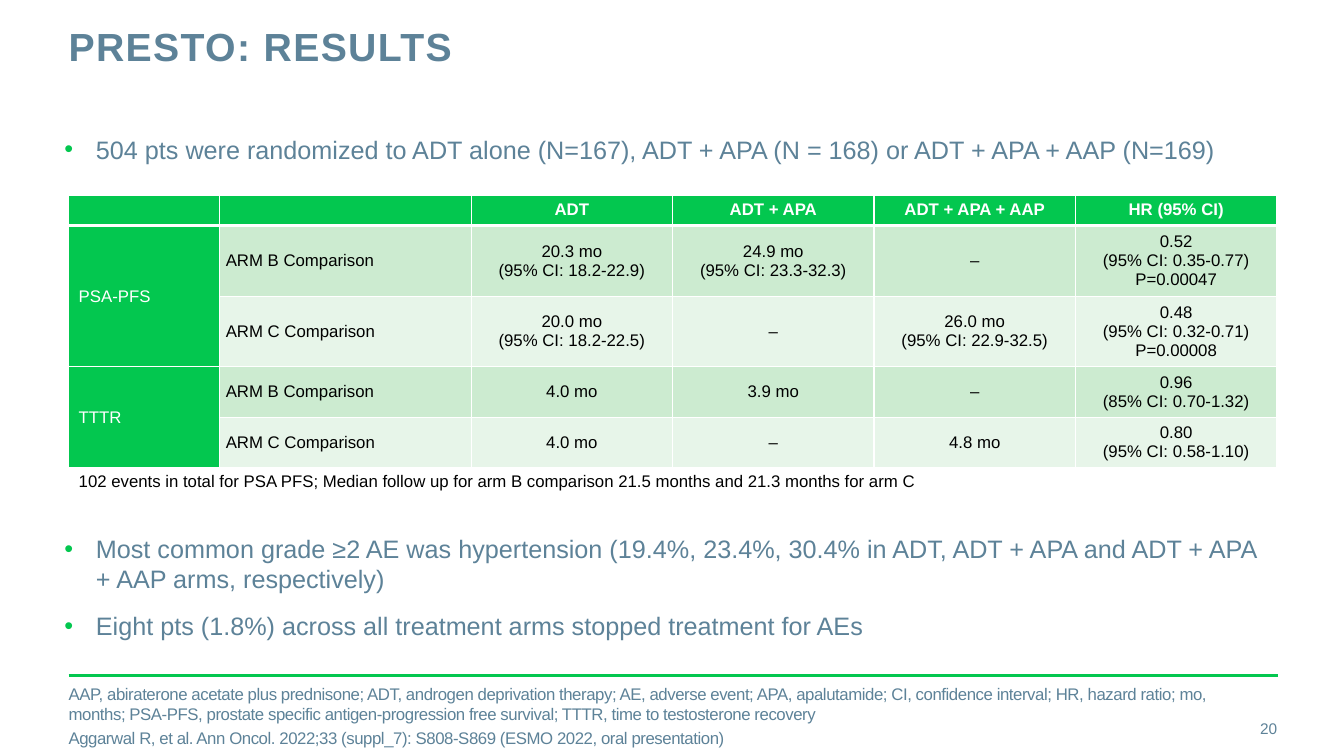
from dataclasses import dataclass

from lxml.etree import SubElement
from pptx import Presentation
from pptx.dml.color import RGBColor
from pptx.enum.shapes import MSO_CONNECTOR
from pptx.enum.text import MSO_ANCHOR, PP_ALIGN
from pptx.oxml.ns import qn
from pptx.util import Pt


@dataclass(frozen=True)
class Theme:
    """Colours, typeface and type sizes of the deck."""

    font: str = "Arial"
    green: str = "03C74F"
    slate: str = "5D8298"
    white: str = "FFFFFF"
    black: str = "000000"
    bands: tuple = ("CCEBD0", "E7F5E9")
    title: float = 28
    body: float = 18
    small: float = 12
    number: float = 11


class SlideBuilder:
    """Draws styled elements on the current slide."""

    def __init__(self, page, theme):
        """Keep the slide and its theme."""
        self.page = page
        self.theme = theme

    def style(self, para, size, color, bold=False, spacing=0):
        """Set the font of a whole paragraph."""
        font = para.font
        font.name, font.size, font.bold = self.theme.font, Pt(size), bold
        font.color.rgb = RGBColor.from_string(color)
        if spacing:
            para._p.pPr.find(qn("a:defRPr")).set("spc", str(spacing))

    def bullet(self, para):
        """Give a paragraph a green bullet with a hanging indent."""
        props = para._p.get_or_add_pPr()
        props.set("marL", str(Pt(22.5)))
        props.set("indent", str(-Pt(22.5)))
        color = SubElement(props, qn("a:buClr"))
        SubElement(color, qn("a:srgbClr"), val=self.theme.green)
        SubElement(props, qn("a:buFont"), typeface=self.theme.font)
        SubElement(props, qn("a:buChar"), char="•")

    def text(self, place, lines, size, bold=False, spacing=0, gap=0, leading=None,
             bullets=False, align=PP_ALIGN.LEFT, anchor=MSO_ANCHOR.TOP):
        """Add a text box with one paragraph per line."""
        frame = self.page.shapes.add_textbox(*map(Pt, place)).text_frame
        frame.word_wrap = True
        frame.vertical_anchor = anchor
        frame.margin_left = frame.margin_right = frame.margin_top = frame.margin_bottom = 0
        for index, line in enumerate(lines):
            para = frame.add_paragraph() if index else frame.paragraphs[0]
            para.text = line
            if bullets:
                self.bullet(para)
            para.alignment = align
            if index:
                para.space_before = Pt(gap)
            if leading:
                para.line_spacing = Pt(leading)
            self.style(para, size, self.theme.slate, bold, spacing)

    def rule(self, left, right, top):
        """Add a horizontal green line."""
        line = self.page.shapes.add_connector(
            MSO_CONNECTOR.STRAIGHT, Pt(left), Pt(top), Pt(right), Pt(top))
        line.line.color.rgb = RGBColor.from_string(self.theme.green)
        line.line.width = Pt(2)
        SubElement(line._element.spPr, qn("a:effectLst"))

    def cell(self, cell, text, color, fill=None, bold=False, align=PP_ALIGN.LEFT,
             anchor=MSO_ANCHOR.MIDDLE, margin=7.2, top=1, bottom=1):
        """Fill one table cell and draw its white borders."""
        props = cell._tc.get_or_add_tcPr()
        for side, width in zip("LRTB", (1, 1, top, bottom)):
            border = SubElement(props, qn(f"a:ln{side}"), w=str(Pt(width)))
            solid = SubElement(border, qn("a:solidFill"))
            SubElement(solid, qn("a:srgbClr"), val=self.theme.white)
        if fill:
            cell.fill.solid()
            cell.fill.fore_color.rgb = RGBColor.from_string(fill)
        else:
            cell.fill.background()
        cell.vertical_anchor = anchor
        cell.margin_left = cell.margin_right = Pt(margin)
        cell.margin_top = cell.margin_bottom = Pt(3.6)
        cell.text = text
        for para in cell.text_frame.paragraphs:
            para.alignment = align
            self.style(para, self.theme.small, color, bold)
            if not text:
                SubElement(para._p, qn("a:endParaRPr"), sz=str(self.theme.small * 100))

    def results_table(self, left, top, widths, heights, header, groups, note):
        """Add the table of endpoints, with two comparisons per endpoint."""
        theme = self.theme
        table = self.page.shapes.add_table(
            len(heights), len(widths), Pt(left), Pt(top),
            Pt(sum(widths)), Pt(sum(heights))).table
        table.first_row = table.horz_banding = False
        for column, width in zip(table.columns, widths):
            column.width = Pt(width)
        for row, height in zip(table.rows, heights):
            row.height = Pt(height)
        for column, label in enumerate(header):
            self.cell(table.cell(0, column), label, theme.white, theme.green, True,
                      PP_ALIGN.CENTER, MSO_ANCHOR.TOP, bottom=3)
        for group, (endpoint, comparisons) in enumerate(groups):
            first = 1 + 2 * group
            table.cell(first, 0).merge(table.cell(first + 1, 0))
            for offset, values in enumerate(comparisons):
                row = first + offset
                edge = 3 if row == 1 else 1
                self.cell(table.cell(row, 0), "" if offset else endpoint,
                          theme.white, theme.green, top=edge)
                for column, value in enumerate(values, 1):
                    align = PP_ALIGN.LEFT if column == 1 else PP_ALIGN.CENTER
                    self.cell(table.cell(row, column), value, theme.black,
                              theme.bands[offset], align=align, margin=4.5, top=edge)
        last = len(heights) - 1
        table.cell(last, 0).merge(table.cell(last, len(widths) - 1))
        for column in range(len(widths)):
            self.cell(table.cell(last, column), "" if column else note,
                      theme.black, anchor=MSO_ANCHOR.TOP)


HEADER = ("", "", "ADT", "ADT + APA", "ADT + APA + AAP", "HR (95% CI)")
GROUPS = (
    ("PSA-PFS", (
        ("ARM B Comparison", "20.3 mo\n(95% CI: 18.2-22.9)", "24.9 mo\n(95% CI: 23.3-32.3)",
         "–", "0.52\n(95% CI: 0.35-0.77)\nP=0.00047"),
        ("ARM C Comparison", "20.0 mo\n(95% CI: 18.2-22.5)", "–",
         "26.0 mo\n(95% CI: 22.9-32.5)", "0.48\n(95% CI: 0.32-0.71)\nP=0.00008"))),
    ("TTTR", (
        ("ARM B Comparison", "4.0 mo", "3.9 mo", "–", "0.96\n(85% CI: 0.70-1.32)"),
        ("ARM C Comparison", "4.0 mo", "–", "4.8 mo", "0.80\n(95% CI: 0.58-1.10)"))),
)
NOTE = ("102 events in total for PSA PFS; Median follow up for arm B comparison "
        "21.5 months and 21.3 months for arm C")
RANDOMIZED = ("504 pts were randomized to ADT alone (N=167), ADT + APA (N = 168) "
              "or ADT + APA + AAP (N=169)",)
SAFETY = (
    "Most common grade ≥2 AE was hypertension (19.4%, 23.4%, 30.4% in ADT, "
    "ADT + APA and ADT + APA + AAP arms, respectively)",
    "Eight pts (1.8%) across all treatment arms stopped treatment for AEs",
)
FOOTNOTES = (
    "AAP, abiraterone acetate plus prednisone; ADT, androgen deprivation therapy; "
    "AE, adverse event; APA, apalutamide; CI, confidence interval; HR, hazard ratio; "
    "mo, months; PSA-PFS, prostate specific antigen-progression free survival; "
    "TTTR, time to testosterone recovery",
    "Aggarwal R, et al. Ann Oncol. 2022;33 (suppl_7): S808-S869 (ESMO 2022, oral presentation)",
)


def main():
    """Build the results slide and save it."""
    deck = Presentation()
    deck.slide_width, deck.slide_height = Pt(960), Pt(540)
    theme = Theme()
    slide = SlideBuilder(deck.slides.add_slide(deck.slide_layouts[6]), theme)
    slide.rule(49, 913, 482.4)
    slide.text((49, 19.4, 688, 63.4), ("PRESTO: RESULTS",), theme.title,
               bold=True, spacing=100, leading=30)
    slide.text((850.3, 506.2, 62, 28.8), ("20",), theme.number,
               align=PP_ALIGN.RIGHT, anchor=MSO_ANCHOR.MIDDLE)
    slide.text((49, 496.8, 828, 28.8), FOOTNOTES, theme.small, spacing=-30, gap=3,
               anchor=MSO_ANCHOR.MIDDLE)
    slide.text((46, 95.8, 863.3, 55.4), RANDOMIZED, theme.body, bullets=True)
    slide.text((46, 380.9, 863.3, 87.8), SAFETY, theme.body, gap=12, bullets=True)
    slide.results_table(49, 139.5, (107.8, 179.8) + (143.9,) * 4,
                        (21.6, 47.3, 47.3, 34.3, 34.3, 21.6), HEADER, GROUPS, NOTE)
    deck.save("out.pptx")


if __name__ == "__main__":
    main()
